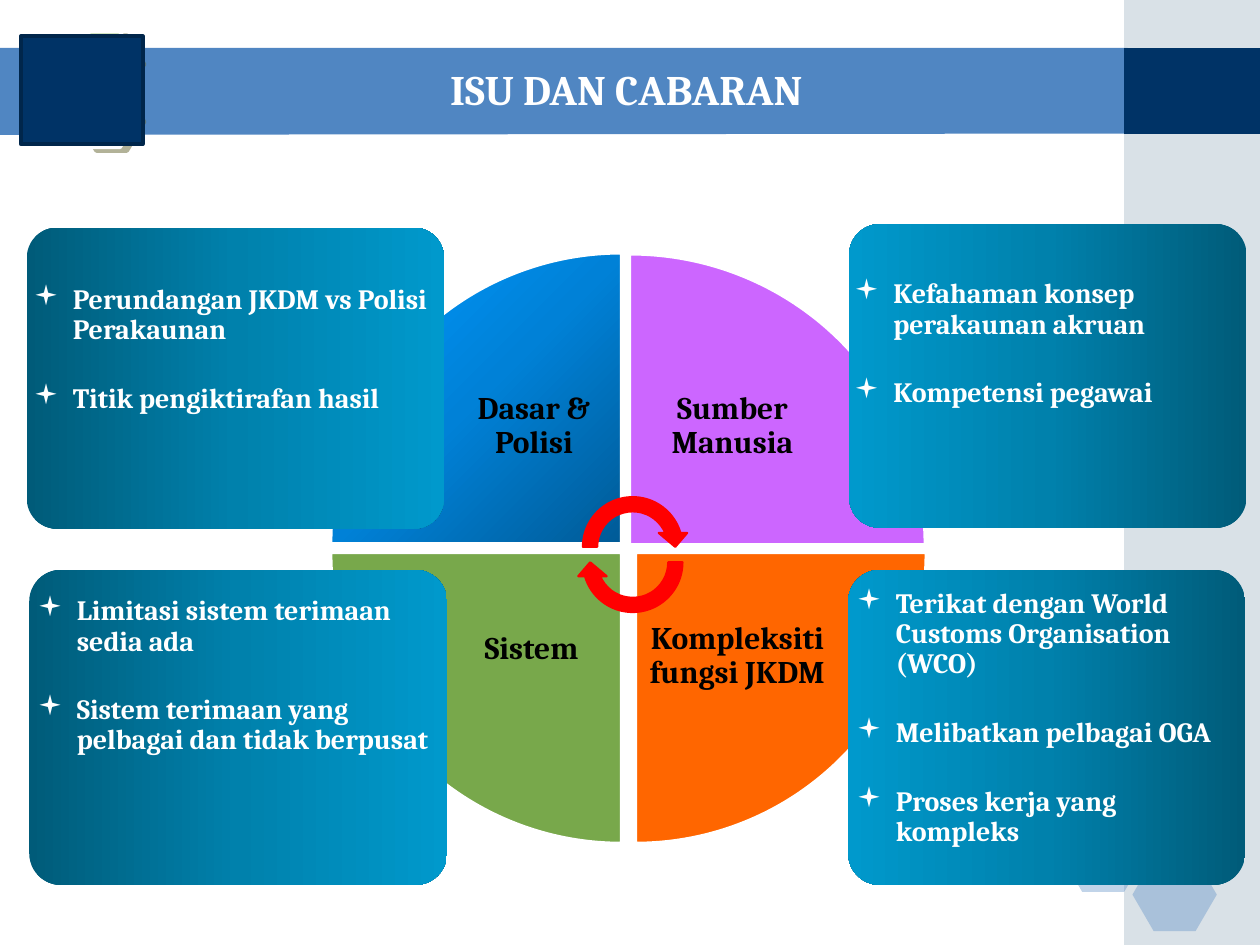
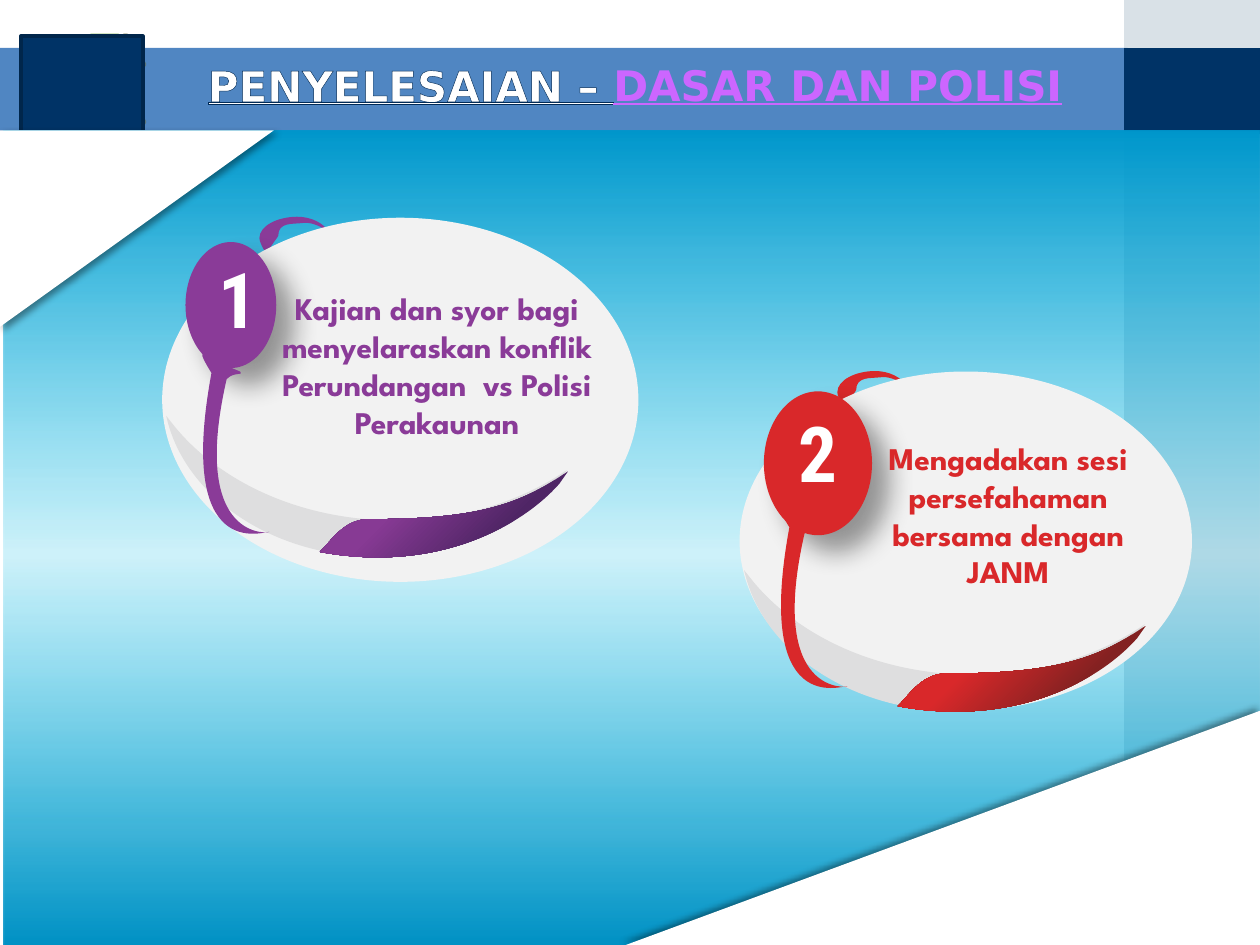
"""Build two slides on issues, challenges and their solutions."""
from dataclasses import dataclass

from lxml.etree import SubElement
from pptx import Presentation
from pptx.dml.color import RGBColor
from pptx.enum.shapes import MSO_SHAPE
from pptx.enum.text import MSO_ANCHOR, PP_ALIGN
from pptx.oxml.ns import qn
from pptx.util import Cm, Pt


@dataclass(frozen=True)
class Theme:
    """Colours, fonts and type sizes of the deck."""
    white: str = "FFFFFF"
    black: str = "000000"
    navy: str = "003366"
    navy_edge: str = "00264B"
    band: str = "5086C2"
    side: str = "A0B5C4"
    indigo: str = "4C59D2"
    green: str = "85BA54"
    orange: str = "DE8848"
    olive: str = "666633"
    violet: str = "CC66FF"
    leaf: str = "78A84B"
    flame: str = "FF6600"
    red: str = "FF0000"
    outline: str = "002A56"
    pale: str = "F2F2F2"
    shade: str = "DEDEDF"
    purple: str = "8A3B98"
    crimson: str = "D9282A"
    blue_stops: tuple = ((0, "005B97"), (50, "0081D7"), (100, "0099FF"))
    card_stops: tuple = ((0, "005B79"), (50, "0081AC"), (100, "0099CC"))
    sky_stops: tuple = ((0, "0097CC"), (52, "06BAE4", 19), (100, "0091C4"))
    purple_stops: tuple = ((34, "873A94"), (74, "4F2565"), (100, "4F2565"))
    crimson_stops: tuple = ((34, "D9282A"), (74, "832121"), (100, "832121"))
    serif: str = "Cambria"
    sans: str = "DejaVu Sans"
    badge: str = "League Spartan"
    digit: str = "Roboto Condensed"
    bullet: str = "Wingdings"
    title_size: int = 24
    label_size: int = 18
    bullet_size: int = 16
    digit_size: int = 44


@dataclass(frozen=True)
class Gradient:
    """Gradient stops with an angle, or radial when the angle is None."""
    stops: tuple
    angle: int = None


T = Theme()
GRID = 0.0254
BAND = [(0, 38), (895, 38), (895, 106), (0, 107), (0, 38)]
SWIRL = [(104, 0), (115, 0, 125, 5, 129, 12), (130, 14), (127, 11),
         (122, 7, 114, 4, 108, 5), (101, 6, 89, 4, 89, 15),
         (89, 16, 80, 27, 81, 28), (81, 30), (78, 27),
         (77, 25, 74, 20, 74, 17), (74, 7, 89, 0, 104, 0)]
SHADE = [(0, 158), (8, 168), (45, 212, 109, 241, 182, 241),
         (232, 241, 279, 227, 315, 203), (318, 201), (311, 211),
         (280, 246, 228, 270, 169, 270), (86, 270, 17, 224, 1, 162)]
RIBBON = [(122, 266), (132, 256, 142, 239, 163, 240),
          (248, 240, 280, 228, 316, 204), (319, 202), (312, 212),
          (281, 247, 213, 283, 122, 266)]
TAIL = [(31, 111), (59, 123), (62, 126, 53, 123, 48, 129),
        (18, 260, 84, 251, 82, 250), (77, 250, 8, 275, 36, 124),
        (23, 103, 31, 110, 31, 111)]


def add(parent, tag, **attrs):
    """Append a drawing element with the given attributes."""
    return SubElement(parent, qn(tag), {k: str(v) for k, v in attrs.items()})


class Deck:
    """Hold the presentation, its theme and the current slide."""

    def __init__(self):
        """Start an empty deck of 4:3 slides."""
        self.prs = Presentation()
        self.prs.slide_width, self.prs.slide_height = Cm(25.4), Cm(19.05)

    def slide(self):
        """Add a slide with the shared band, side strip and hexagons."""
        self.s = self.prs.slides.add_slide(self.prs.slide_layouts[6])
        self.outline(BAND, (0, 0), T.band)
        self.shape(MSO_SHAPE.RECTANGLE, (22.66, 0, 2.74, 19.05), T.side, alpha=40)
        self.shape(MSO_SHAPE.RECTANGLE, (22.66, 0.97, 2.74, 1.73), T.navy)
        for x, y in ((21.39, 16.51), (22.86, 15.67), (22.83, 17.3)):
            self.shape(MSO_SHAPE.HEXAGON, (x, y, 1.7, 1.47), T.band, alpha=35, adj=0.29)
        for x, y, colour in ((0.43, 1.19, T.indigo), (1.45, 0.64, T.green),
                             (1.45, 1.8, T.orange)):
            self.shape(MSO_SHAPE.HEXAGON, (x, y, 1.32, 1.17), colour, adj=0.3,
                       line=(T.white, 2.25), shadow=(T.olive, 50, 0, 4.5, 27))
        self.shape(MSO_SHAPE.RECTANGLE, (0.42, 0.73, 2.46, 2.18), T.navy,
                   line=(T.navy_edge, 2))

    def paint(self, sp, fill, alpha=None, line=None, shadow=None):
        """Set the fill, outline and shadow of a shape."""
        sp.shadow.inherit = False
        spPr = sp.element.spPr
        if isinstance(fill, Gradient):
            sp.fill.background()
            self.gradient(spPr, fill)
        else:
            sp.fill.solid()
            sp.fill.fore_color.rgb = RGBColor.from_string(fill)
            if alpha:
                add(spPr.find(".//" + qn("a:srgbClr")), "a:alpha", val=alpha * 1000)
        if line:
            sp.line.color.rgb = RGBColor.from_string(line[0])
            sp.line.width = Pt(line[1])
        else:
            sp.line.fill.background()
        if shadow:
            colour, opacity, blur, dist, angle = shadow
            outer = add(spPr.find(qn("a:effectLst")), "a:outerShdw", blurRad=Pt(blur),
                        dist=Pt(dist), dir=angle * 60000, algn="ctr", rotWithShape=0)
            add(add(outer, "a:srgbClr", val=colour), "a:alpha", val=opacity * 1000)

    def gradient(self, spPr, fill):
        """Replace the empty fill of a shape by gradient stops."""
        grad = add(spPr, "a:gradFill", rotWithShape=1)
        spPr.replace(spPr.find(qn("a:noFill")), grad)
        stops = add(grad, "a:gsLst")
        for pos, colour, *alpha in fill.stops:
            clr = add(add(stops, "a:gs", pos=pos * 1000), "a:srgbClr", val=colour)
            for value in alpha:
                add(clr, "a:alpha", val=value * 1000)
        if fill.angle is None:
            add(add(grad, "a:path", path="circle"), "a:fillToRect", r=100000, b=100000)
        else:
            add(grad, "a:lin", ang=fill.angle * 60000, scaled=0)

    def shape(self, kind, box, fill, adj=None, rot=0, flip=None, **style):
        """Add a preset shape."""
        sp = self.s.shapes.add_shape(kind, *map(Cm, box))
        sp.rotation = rot
        if adj is not None:
            sp.adjustments[0] = adj
        if flip:
            sp.element.spPr.find(qn("a:xfrm")).set(flip, "1")
        self.paint(sp, fill, **style)

    def outline(self, steps, origin, fill):
        """Add an outline of lines and cubic curves given on the grid."""
        def place(x, y):
            return Cm(origin[0] + x * GRID), Cm(origin[1] + y * GRID)

        start, *ends = [place(*step[-2:]) for step in steps]
        builder = self.s.shapes.build_freeform(*start)
        builder.add_line_segments(ends, close=True)
        sp = builder.convert_to_shape()
        segments = list(sp.element.spPr.iter(qn("a:lnTo")))
        for step, segment in zip(steps[1:], segments):
            if len(step) == 6:
                segment.tag = qn("a:cubicBezTo")
                for i in (0, 2):
                    x, y = place(*step[i:i + 2])
                    segment.insert(i // 2, add(segment, "a:pt", x=x - sp.left, y=y - sp.top))
        self.paint(sp, fill)

    def frame(self, box, anchor=MSO_ANCHOR.TOP, inset=None, top=None):
        """Add a wrapping text box and return its text frame."""
        tf = self.s.shapes.add_textbox(*map(Cm, box)).text_frame
        tf.word_wrap, tf.vertical_anchor = True, anchor
        if inset:
            tf.margin_left = tf.margin_top = tf.margin_right = tf.margin_bottom = Cm(inset)
        if top:
            tf.margin_top = Cm(top)
        return tf

    def run(self, p, text, size, font, colour):
        """Add a bold run to a paragraph."""
        r = p.add_run()
        r.text = text
        r.font.size, r.font.name, r.font.bold = Pt(size), font, True
        r.font.color.rgb = RGBColor.from_string(colour)
        return r

    def text(self, box, text, size, font, colour, spacing=None, **frame):
        """Add one centred paragraph."""
        p = self.frame(box, **frame).paragraphs[0]
        p.alignment, p.line_spacing = PP_ALIGN.CENTER, spacing
        self.run(p, text, size, font, colour)

    def quarter(self, box, rot, fill, label_box, label):
        """Add one wedge of the wheel with its label."""
        self.shape(MSO_SHAPE.PIE_WEDGE, box, fill, rot=rot, line=(T.white, 1.25))
        self.text(label_box, label, T.label_size, T.serif, T.black, spacing=0.9,
                  anchor=MSO_ANCHOR.MIDDLE, inset=0.41)

    def card(self, box, angle, text_box, top, items):
        """Add a rounded card with a bulleted list."""
        self.shape(MSO_SHAPE.ROUNDED_RECTANGLE, box, Gradient(T.card_stops, angle), adj=0.1)
        tf = self.frame(text_box, inset=0.18, top=top)
        for i, item in enumerate(items):
            p = tf.add_paragraph() if i else tf.paragraphs[0]
            pPr = p._p.get_or_add_pPr()
            pPr.set("marL", str(Cm(0.79)))
            pPr.set("indent", str(-Cm(0.79)))
            add(pPr, "a:buFont", typeface=T.bullet, charset=2)
            add(pPr, "a:buChar", char="▪")
            p.line_spacing = 0.9
            if i:
                p.space_before = Pt(22)
            self.run(p, item, T.bullet_size, T.serif, T.white)

    def badge(self, origin, colour, stops, plate, balloon, digit, digit_at, text_box, text,
              top=None):
        """Add a numbered balloon on an oval plate with its text."""
        self.outline(SWIRL, origin, colour)
        self.shape(MSO_SHAPE.OVAL, plate, T.pale)
        self.shape(MSO_SHAPE.OVAL, balloon, colour, shadow=(T.black, 38, 15, 14, 44))
        self.outline(SHADE, origin, T.shade)
        self.outline(RIBBON, origin, Gradient(stops))
        self.outline(TAIL, origin, colour)
        self.text((*digit_at, 2.64, 2.11), digit, T.digit_size, T.digit, T.white)
        self.text(text_box, text, T.label_size, T.badge, colour, top=top)


def issues(deck):
    """Build the wheel of issues and challenges."""
    deck.slide()
    deck.quarter((12.75, 5.08, 5.84, 5.94), 90, T.violet,
                 (12.82, 6.73, 3.89, 3.73), "Sumber Manusia")
    deck.quarter((6.68, 5.11, 5.84, 5.84), 0, Gradient(T.blue_stops, 225),
                 (9.01, 6.73, 3.51, 3.73), "Dasar & Polisi")
    deck.quarter((6.68, 11.15, 5.84, 5.84), 270, T.leaf,
                 (8.91, 11.28, 3.61, 3.61), "Sistem")
    deck.quarter((12.82, 11.15, 5.84, 5.84), 180, T.flame,
                 (12.63, 11.43, 4.47, 3.61), "Kompleksiti fungsi JKDM")
    deck.card((17.1, 11.49, 8, 6.35), 180, (17.09, 11.7, 7.85, 5.16), 0.18,
              ["Terikat dengan World Customs Organisation (WCO)",
               "Melibatkan pelbagai OGA", "Proses kerja yang kompleks"])
    deck.card((0.54, 4.59, 8.41, 6.07), 0, (0.5, 4.83, 8.41, 6.07), 0.92,
              ["Perundangan JKDM vs Polisi Perakaunan", "Titik pengiktirafan hasil"])
    deck.card((17.12, 4.52, 8.01, 6.12), 180, (17.04, 4.7, 8.3, 5.23), 0.94,
              ["Kefahaman konsep perakaunan akruan", "Kompetensi pegawai"])
    deck.card((0.59, 11.49, 8.42, 6.35), 0, (0.58, 11.85, 8.41, 7.1), 0.18,
              ["Limitasi sistem terimaan sedia ada",
               "Sistem terimaan yang pelbagai dan tidak berpusat"])
    for y, rot in ((10.19, 180), (9.88, 0)):
        deck.shape(MSO_SHAPE.CIRCULAR_ARROW, (11.61, y, 2.29, 2.29), T.red, rot=rot,
                   line=(T.red, 1.25))
    deck.text((0, 0.84, 25.25, 1.88), "ISU DAN CABARAN", T.title_size, T.serif, T.white,
              anchor=MSO_ANCHOR.MIDDLE)


def solutions(deck):
    """Build the policy solutions with two numbered badges."""
    deck.slide()
    deck.shape(MSO_SHAPE.RECTANGLE, (0.08, 2.63, 25.32, 16.42), Gradient(T.sky_stops, 90))
    p = deck.frame((3.94, 0.93, 18.62, 1.57), anchor=MSO_ANCHOR.MIDDLE).paragraphs[0]
    lead = deck.run(p, "PENYELESAIAN – ", T.title_size, T.sans, T.white)
    topic = deck.run(p, "DASAR DAN POLISI", T.title_size, T.sans, T.violet)
    lead.font.underline = topic.font.underline = True
    rPr = lead._r.get_or_add_rPr()
    ln = add(rPr, "a:ln", w=Pt(1))
    add(add(ln, "a:solidFill"), "a:srgbClr", val=T.outline)
    rPr.insert(0, ln)
    for box, flip, angle in (((0, 2.63, 5.52, 3.96), "flipV", 45),
                             ((12.62, 14.33, 12.78, 4.72), "flipH", 225)):
        deck.shape(MSO_SHAPE.ISOSCELES_TRIANGLE, box, T.white, adj=0, flip=flip,
                   shadow=(T.black, 40, 4, 3, angle))
    deck.badge((3.35, 4.37), T.purple, T.purple_stops, (3.27, 4.39, 9.6, 7.34),
               (3.74, 4.88, 1.83, 2.54), "1", (3.48, 4.95), (5.24, 5.71, 7.14, 3.33),
               "Kajian dan syor bagi menyelaraskan konflik Perundangan  vs Polisi Perakaunan")
    deck.badge((15, 7.48), T.crimson, T.crimson_stops, (14.91, 7.49, 9.12, 6.83),
               (15.4, 7.89, 2.18, 2.9), "2", (15.17, 8.05), (17.1, 7.54, 6.45, 4.52),
               "Mengadakan sesi persefahaman bersama dengan JANM", top=1.31)


def main():
    """Build and save the deck."""
    deck = Deck()
    issues(deck)
    solutions(deck)
    deck.prs.save("out.pptx")


if __name__ == "__main__":
    main()
